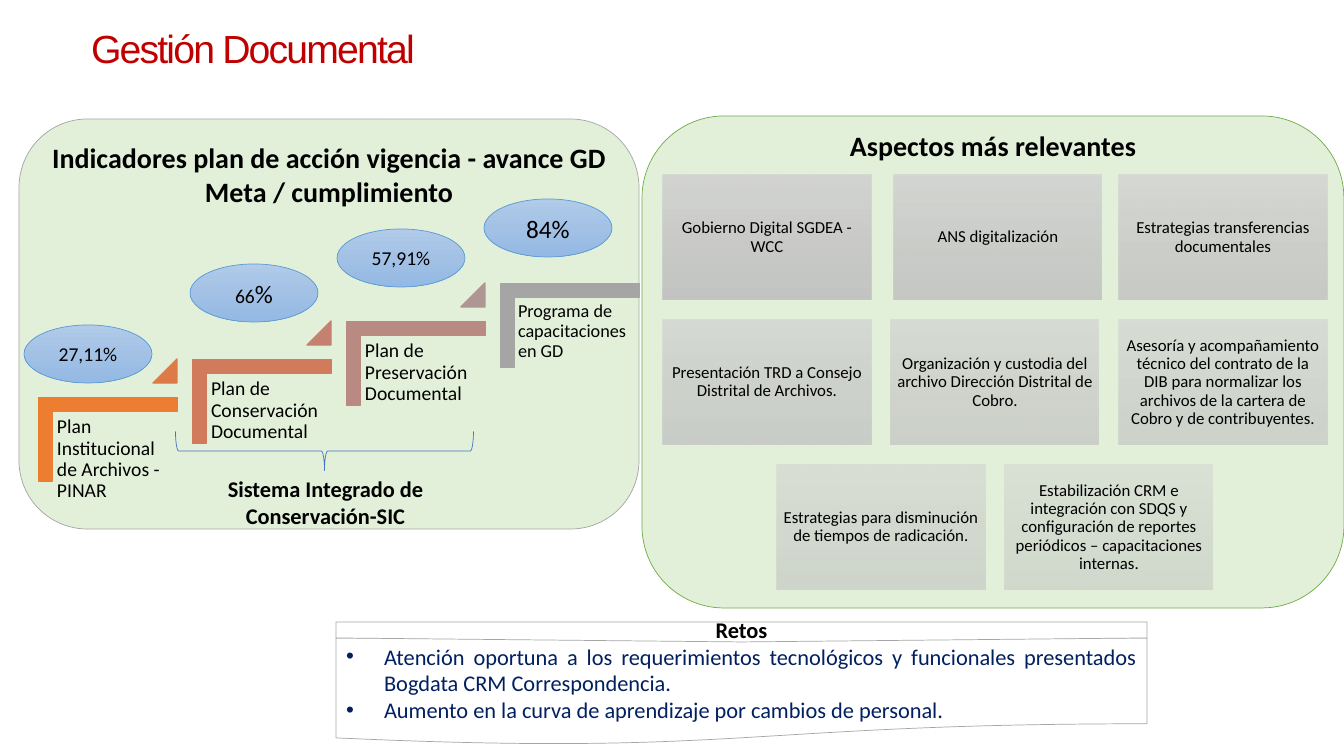
from lxml import etree
from pptx import Presentation
from pptx import util as u
from pptx.dml.color import RGBColor
from pptx.enum import shapes, text
from pptx.oxml import ns, parse_xml

TITLE = "Gestión Documental"
PLAN_HEADING = ["Indicadores plan de acción vigencia - avance GD", "Meta / cumplimiento"]
ASPECTS_HEADING = ["Aspectos más relevantes"]
STEPS = [  # label, size, colour, colour of the triangle after it
    ("Plan Institucional de Archivos - PINAR", 14, "ED7D31", "DE7A47"),
    ("Plan de Conservación Documental", 14, "D17B5C", "C48170"),
    ("Plan de Preservación Documental", 14, "B98A82", "AE9694"),
    ("Programa de capacitaciones en GD", 13, "A5A5A5", None),
]
RATES = [  # left, top, pieces of text with their sizes
    (24, 325, [("27,11%", 14)]),
    (190, 264, [("66", 14), ("%", 18)]),
    (337, 229, [("57,91%", 14)]),
    (484, 199, [("84%", 18)]),
]
SYSTEM = "Sistema Integrado de Conservación-SIC"
ASPECTS = [
    ["Gobierno Digital SGDEA - WCC", "ANS digitalización",
     "Estrategias transferencias documentales"],
    ["Presentación TRD a Consejo Distrital de Archivos.",
     "Organización y custodia del archivo Dirección Distrital de Cobro.",
     "Asesoría y acompañamiento técnico del contrato de la DIB para normalizar "
     "los archivos de la cartera de Cobro y de contribuyentes."],
    ["Estrategias para disminución de tiempos de radicación.",
     "Estabilización CRM e integración con SDQS y configuración de reportes "
     "periódicos – capacitaciones internas."],
]
CHALLENGES_HEADING = "Retos"
CHALLENGES = [
    "Atención oportuna a los requerimientos tecnológicos y funcionales presentados "
    "Bogdata CRM Correspondencia.",
    "Aumento en la curva de aprendizaje por cambios de personal.",
]
COLORS = {"title": "C00000", "text": "000000", "list": "002060", "panel": "E2F0D9",
          "green": "70AD47", "gray": "A5A5A5", "white": "FFFFFF",
          "oval": "5B9BD5", "brace": "4472C4"}
OVAL_GRADIENT = ["B1CBE9", "A3C1E5", "93B9E4"]
CARD_GRADIENT = ["D2D2D2", "C8C8C8", "C0C0C0"]

KIND, ALIGN, ANCHOR = shapes.MSO_SHAPE, text.PP_ALIGN, text.MSO_ANCHOR
PX = 914400 / 100.8


def px(value):
    return u.Emu(round(value * PX))


def place(shape, left, top, width, height):
    shape.left, shape.top = px(left), px(top)
    shape.width, shape.height = px(width), px(height)


def style(font, size, color=COLORS["text"], bold=False, name="Calibri"):
    font.name, font.size, font.bold = name, u.Pt(size), bold
    font.color.rgb = RGBColor.from_string(color)


def add_shape(kind, box, fill=None, line=None, weight=0.5):
    shape = slide.shapes.add_shape(kind, *map(px, box))
    shape.shadow.inherit = False
    if fill:
        shape.fill.solid()
        shape.fill.fore_color.rgb = RGBColor.from_string(fill)
    else:
        shape.fill.background()
    if line:
        shape.line.color.rgb = RGBColor.from_string(line)
        shape.line.width = u.Pt(weight)
    else:
        shape.line.fill.background()
    return shape


def set_gradient(shape, colors, alpha=100):
    stops = "".join(
        f'<a:gs pos="{i * 50000}"><a:srgbClr val="{color}">'
        f'<a:alpha val="{round(alpha * 1000)}"/></a:srgbClr></a:gs>'
        for i, color in enumerate(colors))
    gradient = parse_xml(f'<a:gradFill {ns.nsdecls("a")}><a:gsLst>{stops}</a:gsLst>'
                         '<a:lin ang="5400000" scaled="0"/></a:gradFill>')
    empty = shape._element.spPr.find(ns.qn("a:noFill"))
    empty.getparent().replace(empty, gradient)


def write(shape, lines, size, bold=False, align=ALIGN.CENTER, anchor=ANCHOR.MIDDLE,
          inset=None, spacing=None):
    frame = shape.text_frame
    frame.text = "\n".join(lines)
    frame.word_wrap, frame.vertical_anchor = True, anchor
    if inset is not None:
        frame.margin_left = frame.margin_right = px(inset)
        frame.margin_top = frame.margin_bottom = px(inset)
    for para in frame.paragraphs:
        para.alignment, para.line_spacing = align, spacing
        for span in para.runs:
            style(span.font, size, bold=bold)


def add_text(box, lines, size, **options):
    write(slide.shapes.add_textbox(*map(px, box)), lines, size, **options)


deck = Presentation()
deck.slide_width, deck.slide_height = px(1344), px(756)
slide = deck.slides.add_slide(deck.slide_layouts[1])
title, challenges = slide.placeholders

# Title
place(title, 81, 24, 348, 53)
title.text_frame.text = TITLE
title.text_frame.word_wrap = False
title.text_frame.auto_size = text.MSO_AUTO_SIZE.NONE
para = title.text_frame.paragraphs[0]
para.alignment, para.line_spacing = ALIGN.LEFT, 0.9
style(para.runs[0].font, 28, COLORS["title"], name="Arial")
para.runs[0].font._element.set("spc", "-130")

# Panels and their headings
add_shape(KIND.ROUNDED_RECTANGLE, (642, 116, 702, 492), COLORS["panel"], COLORS["green"])
add_shape(KIND.ROUNDED_RECTANGLE, (19, 119, 620, 410), COLORS["panel"], COLORS["gray"])
add_text((660, 128, 666, 34), ASPECTS_HEADING, 20, bold=True, inset=0)
add_text((29, 140, 600, 68), PLAN_HEADING, 20, bold=True, inset=0)

# Staircase
for i, (label, size, color, triangle_color) in enumerate(STEPS):
    right, up = 154 * i, 38 * i
    corner = add_shape(KIND.CORNER, (66 + right, 370 - up, 84, 139), color, color, 1)
    corner.rotation = 90
    corner.adjustments[0] = corner.adjustments[1] = 0.16
    add_text((51 + right, 411 - up, 126, 110), [label], size, align=ALIGN.LEFT,
             anchor=ANCHOR.TOP, inset=6 if size == 14 else 5, spacing=0.9)
    if triangle_color:
        triangle = add_shape(KIND.ISOSCELES_TRIANGLE, (153 + right, 359 - up, 24, 24),
                             triangle_color, triangle_color, 1)
        triangle.adjustments[0] = 1

# Compliance ovals
for left, top, pieces in RATES:
    oval = add_shape(KIND.OVAL, (left, top, 128, 58), line=COLORS["oval"])
    set_gradient(oval, OVAL_GRADIENT)
    oval.text_frame.vertical_anchor = ANCHOR.MIDDLE
    para = oval.text_frame.paragraphs[0]
    para.alignment = ALIGN.CENTER
    for piece, size in pieces:
        span = para.add_run()
        span.text = piece
        style(span.font, size)

# Brace under the two middle plans
brace = add_shape(KIND.RIGHT_BRACE, (305, 302, 39, 298), line=COLORS["brace"])
brace.rotation = 90
add_text((179, 470, 293, 65), [SYSTEM], 16, bold=True, anchor=ANCHOR.TOP)

# Cards, each row centred in the panel and fainter one by one
CARD_WIDTH, CARD_HEIGHT, PITCH_X, PITCH_Y = 208, 125, 228, 145
alpha = 90
for row, labels in enumerate(ASPECTS):
    start = 995 - (CARD_WIDTH + PITCH_X * (len(labels) - 1)) / 2
    for column, label in enumerate(labels):
        nudge = 3 if (row, column) == (0, 1) else 0
        card = add_shape(KIND.RECTANGLE, (start + PITCH_X * column + nudge,
                                          175 + PITCH_Y * row, CARD_WIDTH, CARD_HEIGHT))
        set_gradient(card, CARD_GRADIENT, alpha)
        write(card, [label], 12, inset=5, spacing=0.9)
        alpha -= 40 / 7

# Challenges: sheet, heading tab and list
add_shape(KIND.FLOWCHART_DOCUMENT, (336, 638, 811, 107), COLORS["white"], COLORS["gray"])
tab = add_shape(KIND.FLOWCHART_OFFPAGE_CONNECTOR, (336, 622, 811, 20),
                COLORS["white"], COLORS["gray"])
write(tab, [CHALLENGES_HEADING], 16, bold=True)
slide.shapes._spTree.append(challenges._element)
place(challenges, 336, 638, 811, 90)
frame = challenges.text_frame
frame.text = "\n".join(CHALLENGES)
frame.vertical_anchor, frame.auto_size = ANCHOR.MIDDLE, text.MSO_AUTO_SIZE.NONE
for para in frame.paragraphs:
    para.alignment, para.space_before = ALIGN.JUSTIFY, u.Pt(0)
    props = para._element.get_or_add_pPr()
    props.set("marL", str(px(38)))
    props.set("indent", str(-px(38)))
    etree.SubElement(props, ns.qn("a:buFont")).set("typeface", "Arial")
    etree.SubElement(props, ns.qn("a:buChar")).set("char", "•")
    style(para.runs[0].font, 16, COLORS["list"])

deck.save("out.pptx")
